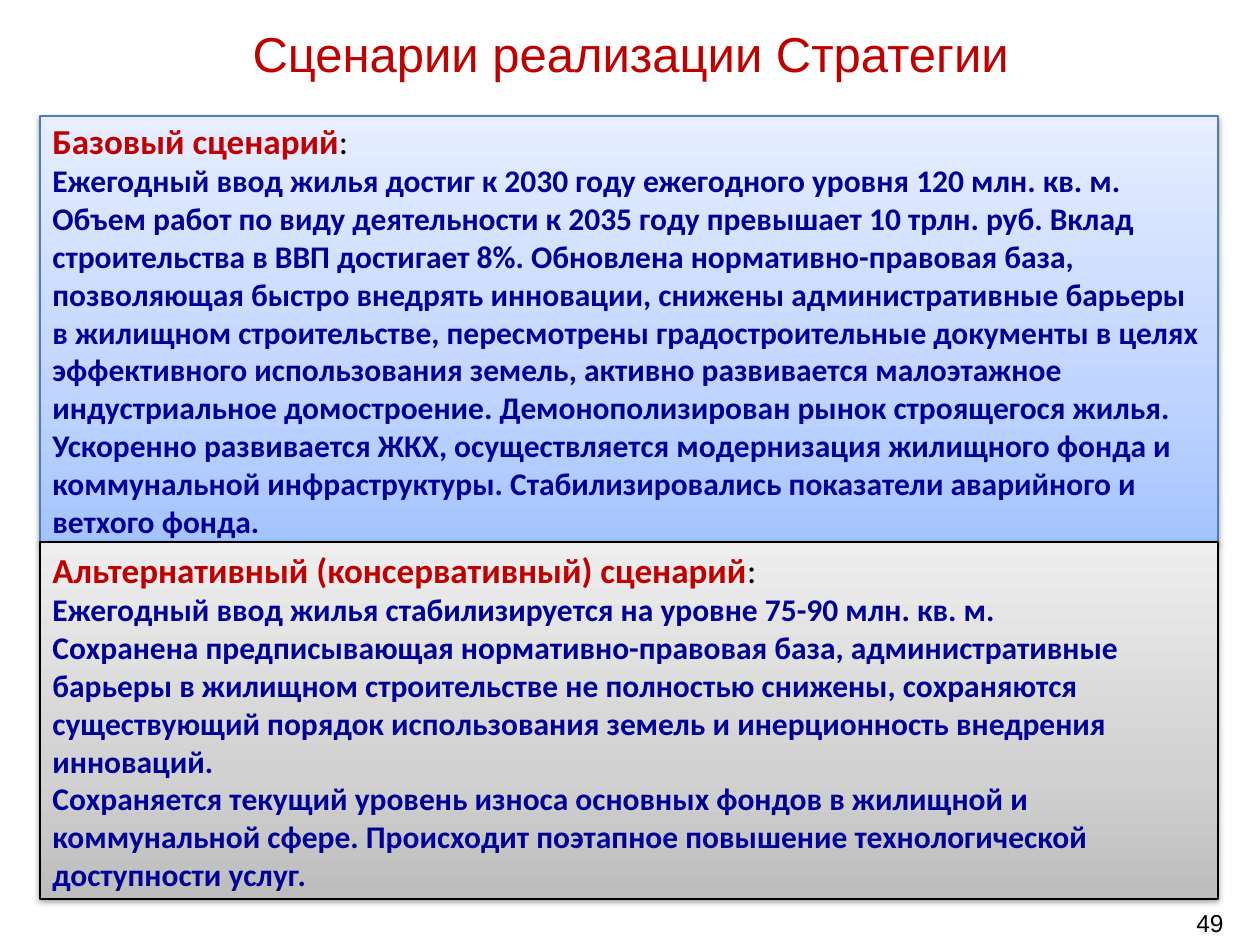
"""Build the slide that compares two scenarios of the Strategy."""
import copy

import pptx
import pptx.dml.color
import pptx.enum.shapes
import pptx.enum.text
import pptx.oxml
import pptx.oxml.ns
import pptx.util

PX = 914400 / 126
ALIGN = pptx.enum.text.PP_ALIGN
RED, NAVY, BLACK = "C00000", "000099", "000000"

LABELS = [
    ("Сценарии реализации Стратегии", (24, 0, 1213, 105), 28, RED, ALIGN.CENTER),
    ("49", (1176, 900, 60, 45), 14, BLACK, ALIGN.RIGHT),
]
SCENARIOS = [
    {
        "heading": "Базовый сценарий",
        "body": [
            "Ежегодный ввод жилья достиг к 2030 году ежегодного уровня 120 млн. кв. м. "
            "Объем работ по виду деятельности к 2035 году превышает 10 трлн. руб. Вклад "
            "строительства в ВВП достигает 8%. Обновлена нормативно-правовая база, "
            "позволяющая быстро внедрять инновации, снижены административные барьеры "
            "в жилищном строительстве, пересмотрены градостроительные документы в целях "
            "эффективного использования земель, активно развивается малоэтажное "
            "индустриальное домостроение. Демонополизирован рынок строящегося жилья.",
            "Ускоренно развивается ЖКХ, осуществляется модернизация жилищного фонда и "
            "коммунальной инфраструктуры. Стабилизировались показатели аварийного и "
            "ветхого фонда.",
        ],
        "box": (40, 116, 1178, 427),
        "gradient": ["A4C4FF", "BFD4FF", "E6EEFF"],
        "outline": "4B7EBC",
    },
    {
        "heading": "Альтернативный (консервативный) сценарий",
        "body": [
            "Ежегодный ввод жилья стабилизируется на уровне 75-90 млн. кв. м.\v"
            "Сохранена предписывающая нормативно-правовая база, административные "
            "барьеры в жилищном строительстве не полностью снижены, сохраняются "
            "существующий порядок использования земель и инерционность внедрения "
            "инноваций.",
            "Сохраняется текущий уровень износа основных фондов в жилищной и "
            "коммунальной сфере. Происходит поэтапное повышение технологической "
            "доступности услуг.",
        ],
        "box": (40, 542, 1178, 357),
        "gradient": ["BDBDBD", "D1D1D1", "EEEEEE"],
        "outline": BLACK,
    },
]
STOPS = [0, 0.35, 1]
SHADOW = (
    f'<a:outerShdw {pptx.oxml.ns.nsdecls("a")} blurRad="40000" dist="20000" '
    'dir="5400000" rotWithShape="0"><a:srgbClr val="000000">'
    '<a:alpha val="38000"/></a:srgbClr></a:outerShdw>'
)


def px(*lengths):
    return [pptx.util.Emu(round(length * PX)) for length in lengths]


def rgb(value):
    return pptx.dml.color.RGBColor.from_string(value)


def style(run, face, size, color, bold=False):
    run.font.name = face
    run.font.size = pptx.util.Pt(size)
    run.font.bold = bold
    run.font.color.rgb = rgb(color)


def prepare(frame):
    frame.word_wrap = True
    frame.vertical_anchor = pptx.enum.text.MSO_ANCHOR.MIDDLE


def add_label(slide, text, box, size, color, align):
    frame = slide.shapes.add_textbox(*px(*box)).text_frame
    prepare(frame)
    frame.text = text
    line = frame.paragraphs[0]
    line.alignment = align
    style(line.runs[0], "Arial", size, color)


def paint(panel, gradient, outline):
    panel.fill.gradient()
    panel.fill.gradient_angle = 90
    stop_list = panel._element.spPr.find(".//" + pptx.oxml.ns.qn("a:gsLst"))
    stop_list.append(copy.deepcopy(stop_list[0]))
    for stop, position, color in zip(panel.fill.gradient_stops, STOPS, gradient):
        stop.position = position
        stop.color.rgb = rgb(color)
    panel.line.color.rgb = rgb(outline)
    panel.line.width = pptx.util.Pt(0.75)
    panel.shadow.inherit = False
    effects = panel._element.spPr.find(pptx.oxml.ns.qn("a:effectLst"))
    effects.append(pptx.oxml.parse_xml(SHADOW))


def add_scenario(slide, scenario):
    rectangle = pptx.enum.shapes.MSO_SHAPE.RECTANGLE
    panel = slide.shapes.add_shape(rectangle, *px(*scenario["box"]))
    paint(panel, scenario["gradient"], scenario["outline"])
    frame = panel.text_frame
    prepare(frame)
    frame.text = "\n".join([scenario["heading"], *scenario["body"]])
    heading, *body = frame.paragraphs
    heading.add_run().text = ":"
    style(heading.runs[0], "Calibri", 20, RED, True)
    style(heading.runs[1], "Calibri", 20, BLACK)
    for paragraph in body:
        for run in paragraph.runs:
            style(run, "Calibri", 18, NAVY, True)
    for paragraph in frame.paragraphs:
        paragraph.alignment = ALIGN.LEFT


def main():
    deck = pptx.Presentation()
    deck.slide_width, deck.slide_height = px(1260, 945)
    slide = deck.slides.add_slide(deck.slide_layouts[6])
    for label in LABELS:
        add_label(slide, *label)
    for scenario in SCENARIOS:
        add_scenario(slide, scenario)
    deck.save("out.pptx")


if __name__ == "__main__":
    main()
